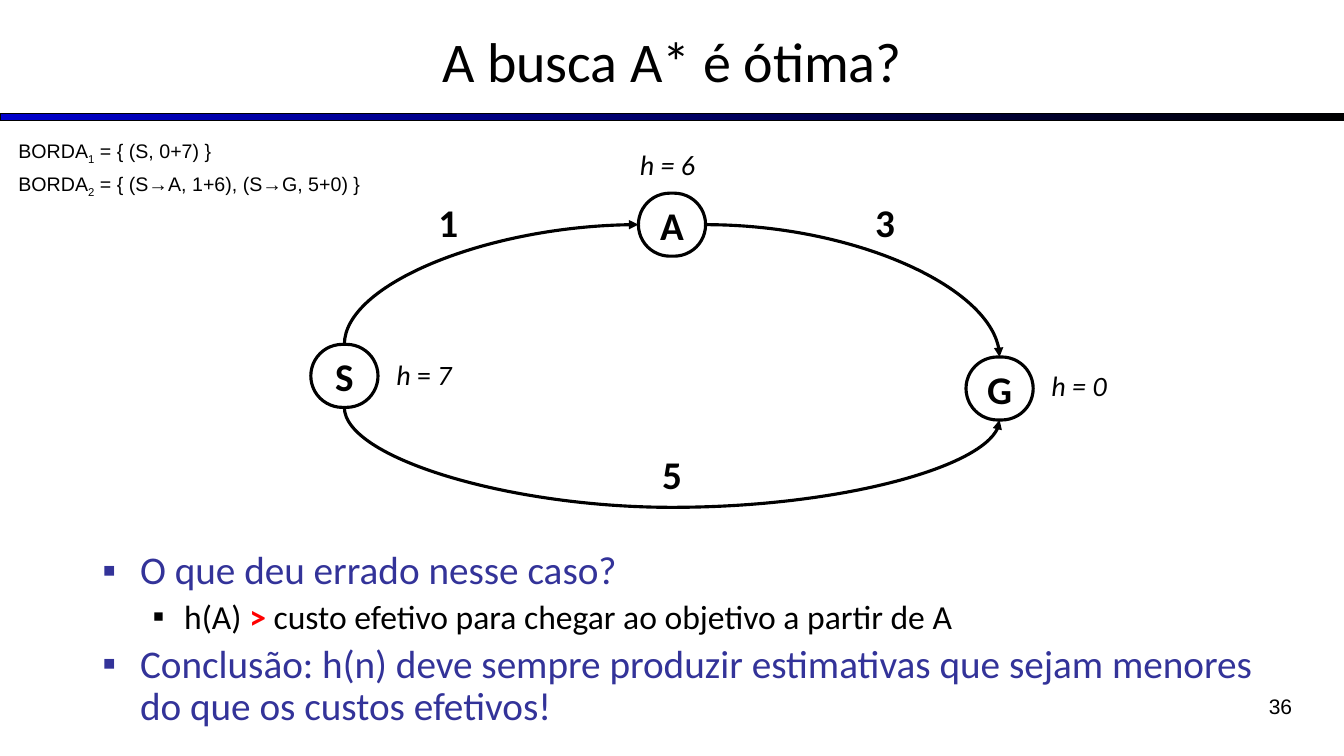
from dataclasses import dataclass

from lxml.etree import SubElement
from pptx import Presentation
from pptx.dml.color import RGBColor
from pptx.enum.shapes import MSO_CONNECTOR as Conn, MSO_SHAPE as Geom
from pptx.enum.text import MSO_ANCHOR as Anchor, PP_ALIGN as Align
from pptx.oxml.ns import qn
from pptx.util import Emu, Pt

EMU_PER_PX = 9525
BLACK, BLUE, INDIGO, RED = "000000", "0000CC", "333399", "FF0000"
TOP, LEFT, BOTTOM, RIGHT = range(4)


@dataclass
class Run:
    text: str
    size: float
    color: str = BLACK
    bold: bool = False
    italic: bool = False
    font: str = "Calibri"
    baseline: int = 0


@dataclass
class Node:
    name: str
    x: int
    y: int


@dataclass
class Label:
    x: int
    y: int
    w: int
    h: int
    runs: list[Run]
    align: Align = Align.LEFT
    anchor: Anchor = Anchor.TOP


@dataclass
class Edge:
    start: str
    start_side: int
    end: str
    end_side: int
    preset: str
    rotation: int = 0
    flips: str = ""
    bend: int = 0


@dataclass
class Bullet:
    runs: list[Run]
    margin: int
    hang: int
    color: str
    before: float


def px(n: int) -> Emu:
    return Emu(n * EMU_PER_PX)


def rgb(value: str) -> RGBColor:
    return RGBColor.from_string(value)


def write(p, runs: list[Run]) -> None:
    for item in runs:
        r = p.add_run()
        r.text = item.text
        f = r.font
        f.name, f.size = item.font, Pt(item.size)
        f.bold, f.italic = item.bold, item.italic
        f.color.rgb = rgb(item.color)
        if item.baseline:
            f._element.set("baseline", str(item.baseline * 1000))


def add_box(s, x: int, y: int, w: int, h: int):
    tf = s.shapes.add_textbox(px(x), px(y), px(w), px(h)).text_frame
    tf.word_wrap = True
    return tf


def add_label(s, label: Label) -> None:
    tf = add_box(s, label.x, label.y, label.w, label.h)
    tf.vertical_anchor = label.anchor
    p = tf.paragraphs[0]
    p.alignment = label.align
    write(p, label.runs)


def add_bar(s) -> None:
    sp = s.shapes.add_shape(Geom.RECTANGLE, 0, px(108), px(1280), px(7))
    sp.shadow.inherit = False
    sp.fill.gradient()
    sp.fill.gradient_angle = 0
    for stop, color in zip(sp.fill.gradient_stops, (BLUE, BLACK)):
        stop.color.rgb = rgb(color)
    sp.line.color.rgb = rgb(BLACK)
    sp.line.width = Pt(0.75)


def add_node(s, node: Node):
    sp = s.shapes.add_shape(Geom.ROUNDED_RECTANGLE, px(node.x), px(node.y), px(64), px(60))
    sp.adjustments[0] = 0.5
    sp.shadow.inherit = False
    sp.fill.background()
    sp.line.color.rgb = rgb(BLACK)
    sp.line.width = Pt(2.25)
    tf = sp.text_frame
    tf.word_wrap = False
    tf.vertical_anchor = Anchor.MIDDLE
    p = tf.paragraphs[0]
    p.alignment = Align.CENTER
    write(p, [Run(node.name, 28, bold=True)])
    return sp


def add_edge(s, edge: Edge, shapes: dict) -> None:
    c = s.shapes.add_connector(Conn.CURVE, 0, 0, 0, 0)
    c.begin_connect(shapes[edge.start], edge.start_side)
    c.end_connect(shapes[edge.end], edge.end_side)
    if edge.rotation % 180:
        mid_x, mid_y = c.left + c.width // 2, c.top + c.height // 2
        c.width, c.height = c.height, c.width
        c.left, c.top = Emu(mid_x - c.width // 2), Emu(mid_y - c.height // 2)
    spPr = c._element.spPr
    xfrm = spPr.find(qn("a:xfrm"))
    xfrm.set("rot", str(edge.rotation * 60000))
    for axis in "HV":
        xfrm.set(f"flip{axis}", str(int(axis in edge.flips)))
    geom = spPr.find(qn("a:prstGeom"))
    geom.set("prst", edge.preset)
    if edge.bend:
        SubElement(geom.find(qn("a:avLst")), qn("a:gd"), name="adj1", fmla=f"val {edge.bend}")
    c.line.color.rgb = rgb(BLACK)
    c.line.width = Pt(2.25)
    SubElement(c.line._get_or_add_ln(), qn("a:tailEnd"), type="triangle")
    SubElement(spPr, qn("a:effectLst"))


def add_bullets(s, bullets: list[Bullet]) -> None:
    tf = add_box(s, 88, 520, 1160, 99)
    for i, bullet in enumerate(bullets):
        p = tf.add_paragraph() if i else tf.paragraphs[0]
        p.line_spacing = 0.9
        p.space_before = Pt(bullet.before)
        write(p, bullet.runs)
        pPr = p._p.get_or_add_pPr()
        pPr.set("marL", str(px(bullet.margin)))
        pPr.set("indent", str(-px(bullet.hang)))
        SubElement(SubElement(pPr, qn("a:buClr")), qn("a:srgbClr"), val=bullet.color)
        SubElement(pPr, qn("a:buFont"), typeface="Arial")
        SubElement(pPr, qn("a:buChar"), char="▪")


def add_frontiers(s, frontiers: list[str]) -> None:
    tf = add_box(s, 8, 128, 352, 61)
    for i, content in enumerate(frontiers):
        p = tf.add_paragraph() if i else tf.paragraphs[0]
        p.space_before = Pt(4 * i)
        write(p, [
            Run("BORDA", 14, font="Arial"),
            Run(str(i + 1), 14, font="Arial", baseline=-25),
            Run(f" = {{ {content} }}", 14, font="Arial"),
        ])


NODES = [Node("A", 608, 184), Node("G", 920, 340), Node("S", 296, 328)]
EDGES = [
    Edge("S", BOTTOM, "G", BOTTOM, "curvedConnector3", 270, "H", 792300),
    Edge("S", TOP, "A", LEFT, "curvedConnector2", 90, "HV"),
    Edge("A", RIGHT, "G", TOP, "curvedConnector2"),
]
LABELS = [
    Label(0, -3, 1280, 120, [Run("A busca A* é ótima?", 40)], Align.CENTER, Anchor.MIDDLE),
    Label(408, 184, 48, 55, [Run("1", 28, bold=True)]),
    Label(824, 184, 48, 55, [Run("3", 28, bold=True)]),
    Label(0, 424, 1280, 55, [Run("5", 28, bold=True)], Align.CENTER),
    Label(600, 136, 96, 42, [Run("h = 6", 20, italic=True)]),
    Label(992, 346, 96, 42, [Run("h = 0", 20, italic=True)]),
    Label(368, 336, 80, 42, [Run("h", 20, italic=True), Run(" = ", 20), Run("7", 20, italic=True)]),
    Label(1016, 656, 224, 50, [Run("36", 15, font="Arial")], Align.RIGHT),
]
BULLETS = [
    Bullet([Run("O que deu errado nesse caso?", 28, INDIGO)], 36, 36, INDIGO, 0),
    Bullet([
        Run("h(A) ", 24),
        Run(">", 24, RED, bold=True),
        Run(" custo efetivo para chegar ao objetivo a partir de A", 24),
    ], 78, 30, BLACK, 4.8),
    Bullet([Run("Conclusão: h(n) deve sempre produzir estimativas que sejam menores "
                "do que os custos efetivos!", 28, INDIGO)], 36, 36, INDIGO, 5.6),
]


def main() -> None:
    prs = Presentation()
    prs.slide_width, prs.slide_height = px(1280), px(720)
    s = prs.slides.add_slide(prs.slide_layouts[6])
    add_bar(s)
    add_bullets(s, BULLETS)
    shapes = {node.name: add_node(s, node) for node in NODES}
    for label in LABELS:
        add_label(s, label)
    for edge in EDGES:
        add_edge(s, edge, shapes)
    add_frontiers(s, ["(S, 0+7)", "(S→A, 1+6), (S→G, 5+0)"])
    prs.save("out.pptx")


if __name__ == "__main__":
    main()
